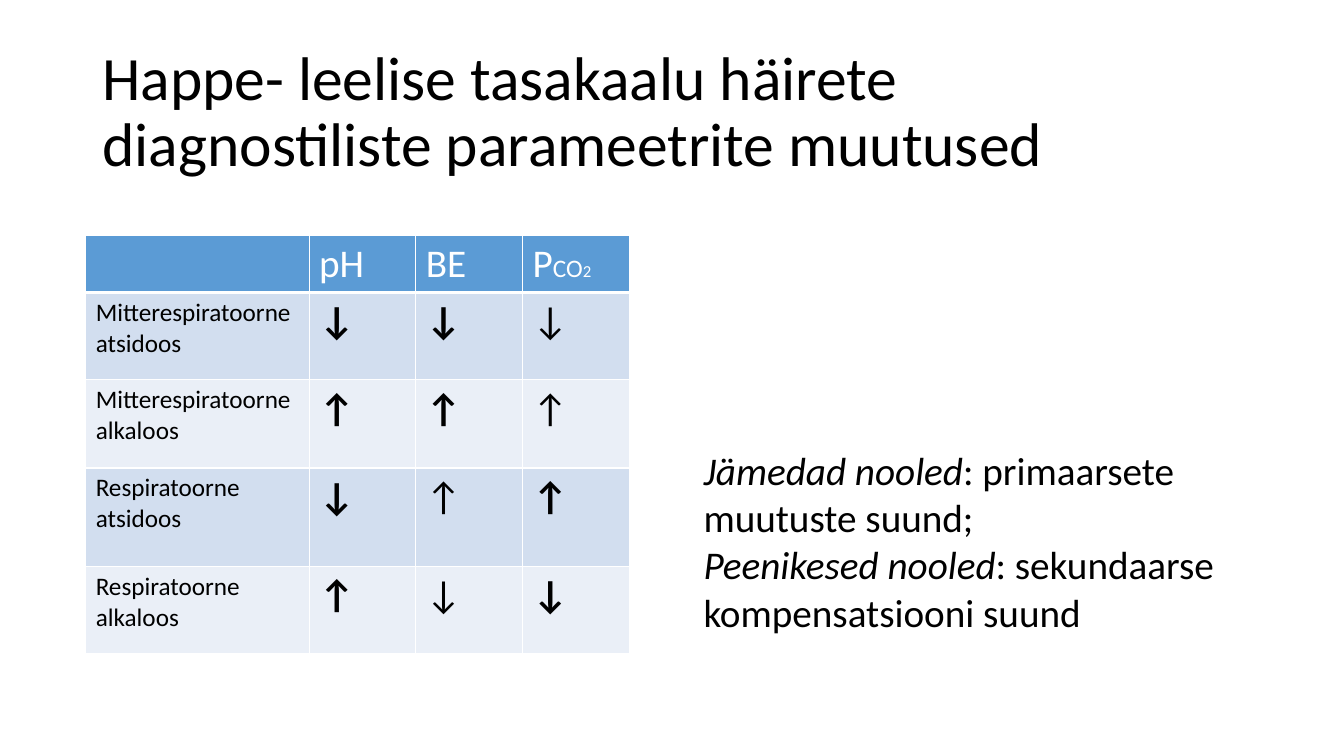
from lxml import etree
from pptx import Presentation
from pptx import oxml
from pptx import util as u
from pptx.dml import color
from pptx.enum import text
from pptx.oxml import ns

FONT = "Calibri"
BLACK, WHITE, BLUE = "000000", "FFFFFF", "5B9BD5"
BANDS = ("D2DEEF", "EAEFF7")
HEADINGS = ([], [("pH", 28)], [("BE", 28)], [("P", 28), ("CO", 18), ("2", 12)])
DISORDERS = (
    ("Mitterespiratoorne atsidoos", "↓↓↓", (True, True, False)),
    ("Mitterespiratoorne alkaloos", "↑↑↑", (True, True, False)),
    ("Respiratoorne atsidoos", "↓↑↑", (True, False, True)),
    ("Respiratoorne alkaloos", "↑↓↓", (True, False, True)),
)
COLUMN_WIDTHS = (5.63, 2.69, 2.69, 2.69)
ROW_HEIGHTS = (1.42, 2.2, 2.22, 2.48, 2.2)


def rgb(value):
    """Return the colour for a hex string."""
    return color.RGBColor.from_string(value)


def add_run(paragraph, words, size, colour=BLACK, bold=False, italic=False):
    """Append formatted words to a paragraph."""
    run = paragraph.add_run()
    run.text = words
    run.font.name = FONT
    run.font.size = u.Pt(size)
    run.font.bold = bold
    run.font.italic = italic
    run.font.color.rgb = rgb(colour)


def add_text_frame(slide, left, top, width, height, anchor):
    """Add a wrapping text box and return its frame."""
    box = slide.shapes.add_textbox(u.Cm(left), u.Cm(top), u.Cm(width), u.Cm(height))
    frame = box.text_frame
    frame.word_wrap = True
    frame.vertical_anchor = anchor
    return frame


def add_title(slide, words):
    """Add the slide heading."""
    frame = add_text_frame(slide, 2.33, 1.02, 28.9, 3.68, text.MSO_ANCHOR.MIDDLE)
    heading = frame.paragraphs[0]
    heading.line_spacing = 0.9
    add_run(heading, words, 44)


def add_legend(slide, entries):
    """Add the key to the arrows, one term and meaning per paragraph."""
    frame = add_text_frame(slide, 17.48, 11.13, 15.67, 5.05, text.MSO_ANCHOR.TOP)
    for index, (term, meaning) in enumerate(entries):
        entry = frame.add_paragraph() if index else frame.paragraphs[0]
        add_run(entry, term, 28, italic=True)
        add_run(entry, meaning, 28)


def style_cell(cell, fill, bottom=1, top=1):
    """Give a cell white borders and a solid fill."""
    properties = cell._tc.get_or_add_tcPr()
    for side, points in (("L", 1), ("R", 1), ("T", top), ("B", bottom)):
        line = etree.SubElement(properties, ns.qn(f"a:ln{side}"), w=str(u.Pt(points)))
        solid = etree.SubElement(line, ns.qn("a:solidFill"))
        etree.SubElement(solid, ns.qn("a:srgbClr"), val=WHITE)
    cell.fill.solid()
    cell.fill.fore_color.rgb = rgb(fill)


def add_parameter_table(slide):
    """Add the table of disorders and their parameter changes."""
    table = slide.shapes.add_table(
        len(ROW_HEIGHTS), len(COLUMN_WIDTHS), u.Cm(2.16), u.Cm(5.93),
        u.Cm(sum(COLUMN_WIDTHS)), u.Cm(sum(ROW_HEIGHTS))).table
    for column, width in zip(table.columns, COLUMN_WIDTHS):
        column.width = u.Cm(width)
    for row, height in zip(table.rows, ROW_HEIGHTS):
        row.height = u.Cm(height)
    for cell, parts in zip(table.rows[0].cells, HEADINGS):
        style_cell(cell, BLUE, bottom=3)
        for words, size in parts:
            add_run(cell.text_frame.paragraphs[0], words, size, WHITE)
    for index, (disorder, arrows, primary) in enumerate(DISORDERS):
        cells = list(table.rows[index + 1].cells)
        for cell in cells:
            style_cell(cell, BANDS[index % 2], top=1 if index else 3)
        add_run(cells[0].text_frame.paragraphs[0], disorder, 18)
        for cell, arrow, bold in zip(cells[1:], arrows, primary):
            add_run(cell.text_frame.paragraphs[0], arrow, 28, bold=bold)


def main():
    """Build and save the slide."""
    deck = Presentation()
    deck.slide_width, deck.slide_height = u.Cm(33.87), u.Cm(19.05)
    slide = deck.slides.add_slide(deck.slide_layouts[6])
    add_title(slide, "Happe- leelise tasakaalu häirete diagnostiliste parameetrite muutused")
    add_legend(slide, (
        ("Jämedad nooled", ": primaarsete muutuste suund;"),
        ("Peenikesed nooled", ": sekundaarse kompensatsiooni suund"),
    ))
    add_parameter_table(slide)
    deck.save("out.pptx")


if __name__ == "__main__":
    main()
